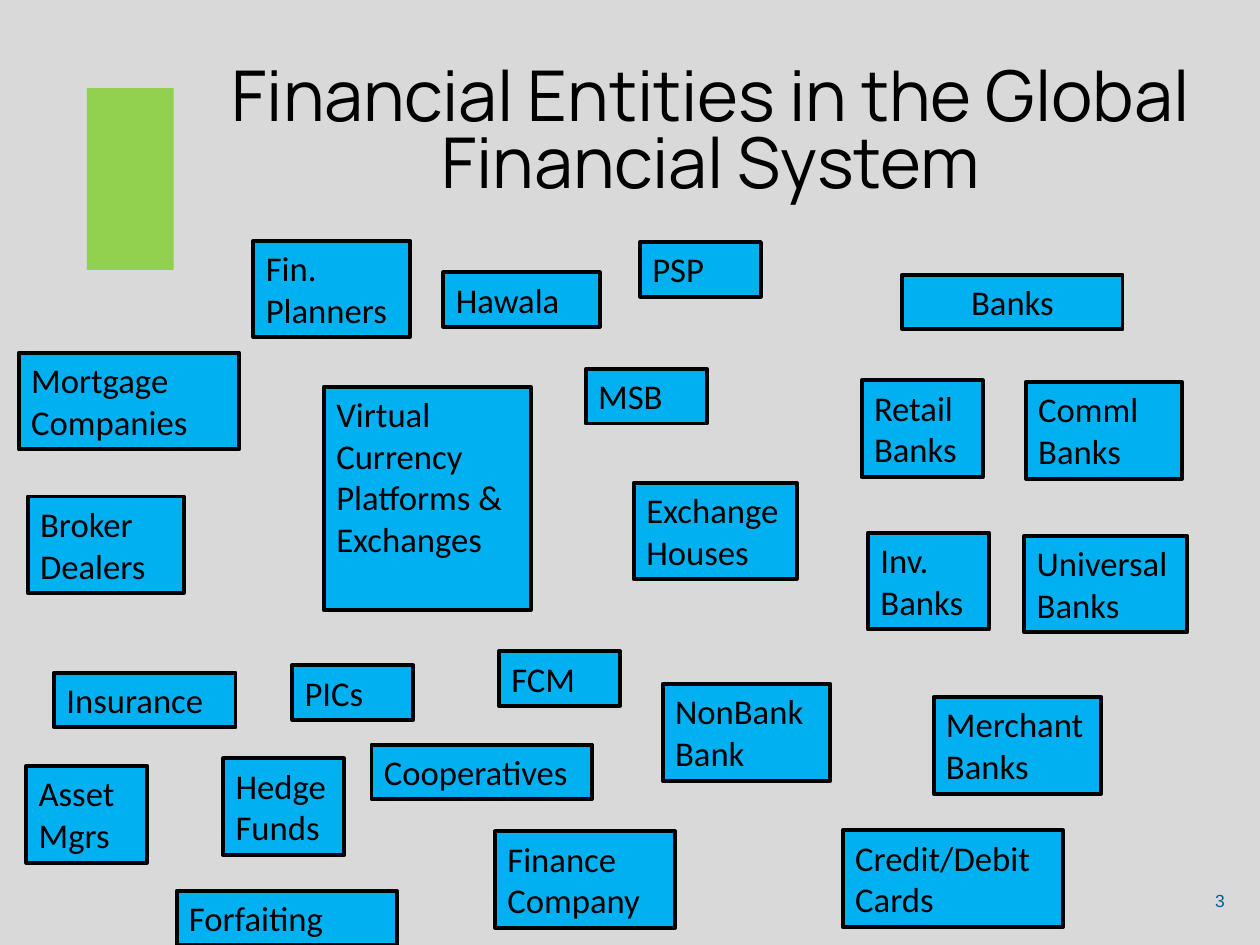
import pptx
import pptx.util
import pptx.dml.color
import pptx.enum.shapes
import pptx.enum.text

Cm = pptx.util.Cm
Pt = pptx.util.Pt
RGB = pptx.dml.color.RGBColor
Align = pptx.enum.text.PP_ALIGN
Shape = pptx.enum.shapes.MSO_SHAPE

GREY = RGB(0xD9, 0xD9, 0xD9)
BLACK = RGB(0, 0, 0)
BLUE = RGB(0x00, 0xB0, 0xF0)
GREEN = RGB(0x92, 0xD0, 0x50)
NAVY = RGB(0x00, 0x62, 0x99)

SMALL, SHORT, MID, WIDE = 2.44, 3.15, 3.38, 4.44

ENTITIES = [
    ("Virtual Currency Platforms & Exchanges", 6.53, 7.8, 4.17, 5),
    ("Hedge Funds", 4.5, 15.29, SMALL, 2),
    ("FCM", 10.06, 13.13, SMALL, 1),
    ("Asset Mgrs", 0.53, 15.44, SMALL, 2),
    ("PICs", 5.89, 13.41, SMALL, 1),
    ("MSB", 11.81, 7.44, SMALL, 1),
    ("Hawala", 8.94, 5.49, SHORT, 1),
    ("PSP", 12.9, 4.88, SMALL, 1),
    ("Exchange Houses", 12.78, 9.73, 3.28, 2),
    ("NonBank Bank", 13.36, 13.79, MID, 2),
    ("Finance Company", 9.98, 16.76, 3.63, 2),
    ("Inv.\nBanks", 17.5, 10.74, SMALL, 2),
    ("Retail\vBanks", 17.37, 7.67, SMALL, 2),
    ("Merchant\nBanks", 18.82, 14.05, MID, 2),
    ("Universal Banks", 20.65, 10.8, 3.28, 2),
    ("Comml Banks", 20.68, 7.7, SHORT, 2),
    ("Banks", 18.19, 5.54, WIDE, 1),
    ("Fin. Planners", 5.11, 4.85, SHORT, 2),
    ("Broker Dealers", 0.56, 10.01, SHORT, 2),
    ("Insurance", 1.09, 13.56, 3.66, 1),
    ("Credit/Debit Cards", 16.99, 16.74, WIDE, 2),
    ("Mortgage Companies", 0.38, 7.11, WIDE, 2),
    ("Forfaiting", 3.56, 17.96, WIDE, 1),
    ("Cooperatives", 7.49, 15.01, WIDE, 1),
]


def write(frame, text, font="Calibri", size=19.8, color=BLACK,
          align=Align.LEFT, space=None, wrap=True):
    frame.word_wrap = wrap
    frame.vertical_anchor = pptx.enum.text.MSO_ANCHOR.TOP
    frame.text = text
    for para in frame.paragraphs:
        para.alignment = align
        para.line_spacing = space
        for run in para.runs:
            run.font.name = font
            run.font.size = Pt(size)
            run.font.color.rgb = color


class Board:
    def __init__(self, slide):
        self.slide = slide
        fill = slide.background.fill
        fill.solid()
        fill.fore_color.rgb = GREY

    def block(self, left, top, width, height, color):
        shape = self.slide.shapes.add_shape(
            Shape.RECTANGLE, Cm(left), Cm(top), Cm(width), Cm(height))
        shape.shadow.inherit = False
        shape.fill.solid()
        shape.fill.fore_color.rgb = color
        shape.line.fill.background()
        return shape

    def label(self, text, left, top, width, height, **style):
        box = self.slide.shapes.add_textbox(
            Cm(left), Cm(top), Cm(width), Cm(height))
        write(box.text_frame, text, **style)

    def entity(self, text, left, top, width, lines):
        shape = self.block(left, top, width, 0.25 + 0.85 * lines, BLUE)
        shape.line.color.rgb = BLACK
        shape.line.width = Pt(2.25)
        align = Align.CENTER if text == "Banks" else Align.LEFT
        write(shape.text_frame, text, align=align)


def main():
    deck = pptx.Presentation()
    deck.slide_width, deck.slide_height = Cm(25.4), Cm(19.05)
    board = Board(deck.slides.add_slide(deck.slide_layouts[6]))
    board.block(1.75, 1.78, 1.75, 3.66, GREEN)
    board.label("3", 24, 17.81, 0.94, 0.69, font="Arial", size=10,
                color=NAVY, align=Align.RIGHT, wrap=False)
    board.label("Financial Entities in the Global Financial System",
                3.25, 1.24, 22.15, 2.95, font="Manrope", size=40,
                align=Align.CENTER, space=0.8)
    for item in ENTITIES:
        board.entity(*item)
    deck.save("out.pptx")


if __name__ == "__main__":
    main()
